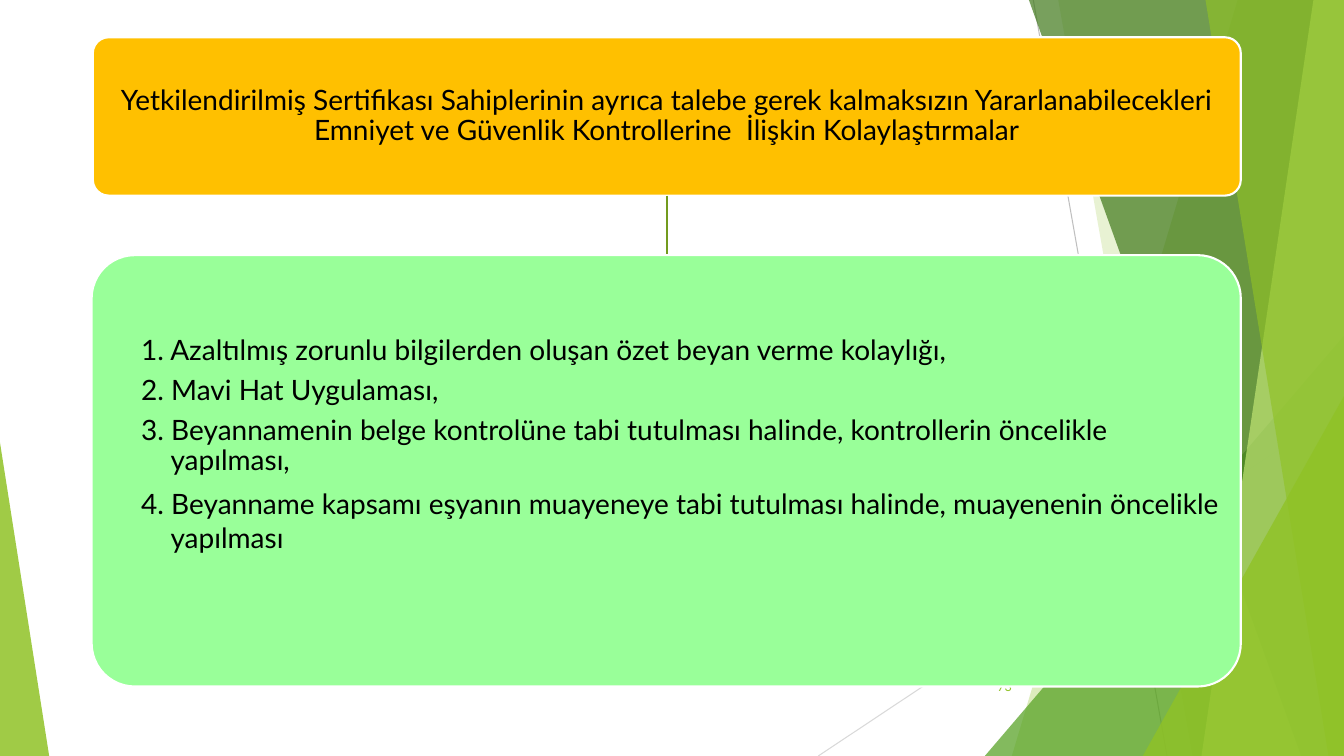
from lxml.etree import SubElement
from pptx import Presentation
from pptx.dml.color import RGBColor
from pptx.enum.shapes import MSO_CONNECTOR, MSO_SHAPE
from pptx.enum.text import MSO_ANCHOR, PP_ALIGN
from pptx.oxml.ns import qn
from pptx.util import Cm, Pt

HUES = {
    "lime": "90C226", "leaf": "54A021", "moss": "3F7819", "pale": "C0E474",
    "gold": "FFC000", "mint": "99FF99", "link": "739B1E", "gray": "BFBFBF",
    "mist": "D9D9D9", "white": "FFFFFF", "black": "000000",
}
PAGE = (0, 0, 33.87, 19.05)
HEAD = (2.34, 0.94, 28.93, 3.99)
PANEL = (2.31, 6.43, 28.96, 10.87)
NUMBER = (23.85, 16.79, 1.9, 1.02)
PAD = 0.2

TITLE = ("Yetkilendirilmiş Sertifikası Sahiplerinin ayrıca talebe gerek "
         "kalmaksızın Yararlanabilecekleri Emniyet ve Güvenlik "
         "Kontrollerine  İlişkin Kolaylaştırmalar")
ITEMS = [
    "1. Azaltılmış zorunlu bilgilerden oluşan özet beyan verme kolaylığı,",
    "2. Mavi Hat Uygulaması,",
    "3. Beyannamenin belge kontrolüne tabi tutulması halinde, "
    "kontrollerin öncelikle yapılması,",
    "4. Beyanname kapsamı eşyanın muayeneye tabi tutulması halinde, "
    "muayenenin öncelikle yapılması",
]
TIGHT = {"line_spacing": 0.9, "space_after": Pt(7)}

# Wedges: top x and bottom x, each running to the right edge of the page.
# Peaks: left, top, width, height and the place of the apex.
SHARDS = [
    ("wedge", (31.19, 25.5), "lime", 30),
    ("wedge", (26.67, 30.05), "lime", 20),
    ("peak", (24.82, 8.46, 9.05, 10.59, 1), "leaf", 72),
    ("wedge", (25.93, 32.79), "moss", 70),
    ("wedge", (33.1, 30.28), "pale", 70),
    ("wedge", (30.38, 33.48), "lime", 65),
    ("peak", (28.8, 9.98, 5.07, 9.07, 1), "lime", 80),
    ("peak", (0, 11.15, 1.24, 7.9, 0), "lime", 85),
]


def tint(hue):
    return RGBColor.from_string(HUES[hue])


def apply(target, values):
    """Set each named attribute of the target."""
    for name, value in values.items():
        setattr(target, name, value)


def paint(shape, hue, alpha=100):
    shape.shadow.inherit = False
    shape.fill.solid()
    shape.fill.fore_color.rgb = tint(hue)
    shape.line.fill.background()
    if alpha < 100:
        color = shape.fill._xPr.find(".//" + qn("a:srgbClr"))
        SubElement(color, qn("a:alpha"), val=str(alpha * 1000))


def draw_line(slide, start, end, hue, width):
    line = slide.shapes.add_connector(
        MSO_CONNECTOR.STRAIGHT, *[Cm(n) for n in start + end])
    line.line.color.rgb = tint(hue)
    line.line.width = Pt(width)
    SubElement(line._element.spPr, qn("a:effectLst"))


def write(frame, lines, size, hue, layout, frame_values):
    """Fill a text frame; layout gives one dict of values per line."""
    apply(frame, {"word_wrap": True, **frame_values})
    for index, (text, values) in enumerate(zip(lines, layout)):
        para = frame.add_paragraph() if index else frame.paragraphs[0]
        apply(para, values)
        run = para.add_run()
        run.text = text
        apply(run.font, {"name": "Lato", "size": Pt(size)})
        run.font.color.rgb = tint(hue)


def add_wedge(slide, box, top, base):
    left, y, width, height = box
    right, floor = left + width, y + height
    points = [(right, y), (right, floor), (left + base, floor)]
    outline = slide.shapes.build_freeform(Cm(left + top), Cm(y))
    outline.add_line_segments([(Cm(a), Cm(b)) for a, b in points])
    return outline.convert_to_shape()


def add_peak(slide, box, x, y, width, height, apex):
    shape = slide.shapes.add_shape(
        MSO_SHAPE.ISOSCELES_TRIANGLE, Cm(box[0] + x), Cm(box[1] + y),
        Cm(width), Cm(height))
    shape.adjustments[0] = apex
    return shape


def add_backdrop(slide, box):
    left, top, width, height = box
    floor = top + height
    draw_line(slide, (left + 26.04, top), (left + 29.41, floor), "gray", 0.75)
    draw_line(slide, (left + width, top + 10.24), (left + 20.62, floor),
              "mist", 0.75)
    makers = {"wedge": add_wedge, "peak": add_peak}
    for kind, place, hue, alpha in SHARDS:
        paint(makers[kind](slide, box, *place), hue, alpha)


def add_number(slide, box, text):
    label = slide.shapes.add_textbox(*[Cm(n) for n in box])
    write(label.text_frame, [text], 9, "lime",
          [{"alignment": PP_ALIGN.RIGHT}],
          {"vertical_anchor": MSO_ANCHOR.MIDDLE})


def add_card(slide, box, hue, lines, layout, anchor, drop=PAD):
    """Rounded card whose text starts at the given drop from its top."""
    card = slide.shapes.add_shape(
        MSO_SHAPE.ROUNDED_RECTANGLE, *[Cm(n) for n in box])
    card.adjustments[0] = 0.1
    paint(card, hue)
    card.line.color.rgb = tint("white")
    card.line.width = Pt(1.5)
    write(card.text_frame, lines, 20, "black", layout, {
        "vertical_anchor": anchor, "margin_top": Cm(drop),
        "margin_left": Cm(PAD), "margin_right": Cm(PAD),
        "margin_bottom": Cm(PAD)})


def add_head(slide, box):
    add_card(slide, box, "gold", [TITLE],
             [{"alignment": PP_ALIGN.CENTER, **TIGHT}], MSO_ANCHOR.MIDDLE)


def add_link(slide, upper, lower):
    """Join the bottom of one card to the top of the next."""
    middle = upper[0] + upper[2] / 2
    draw_line(slide, (middle, upper[1] + upper[3]), (middle, lower[1]),
              "link", 1.5)


def add_panel(slide, box):
    left = {"alignment": PP_ALIGN.LEFT}
    layout = [{**left, **TIGHT}] * (len(ITEMS) - 1) + [left]
    add_card(slide, box, "mint", ITEMS, layout, MSO_ANCHOR.TOP, 1.73)
    for para in slide.shapes[-1].text_frame.paragraphs:
        props = para._p.get_or_add_pPr()
        props.set("marL", str(Cm(1.47)))
        props.set("indent", str(Cm(-0.74)))


def main():
    deck = Presentation()
    apply(deck, {"slide_width": Cm(PAGE[2]), "slide_height": Cm(PAGE[3])})
    slide = deck.slides.add_slide(deck.slide_layouts[6])
    add_backdrop(slide, PAGE)
    add_number(slide, NUMBER, "73")
    add_head(slide, HEAD)
    add_link(slide, HEAD, PANEL)
    add_panel(slide, PANEL)
    deck.save("out.pptx")


if __name__ == "__main__":
    main()
